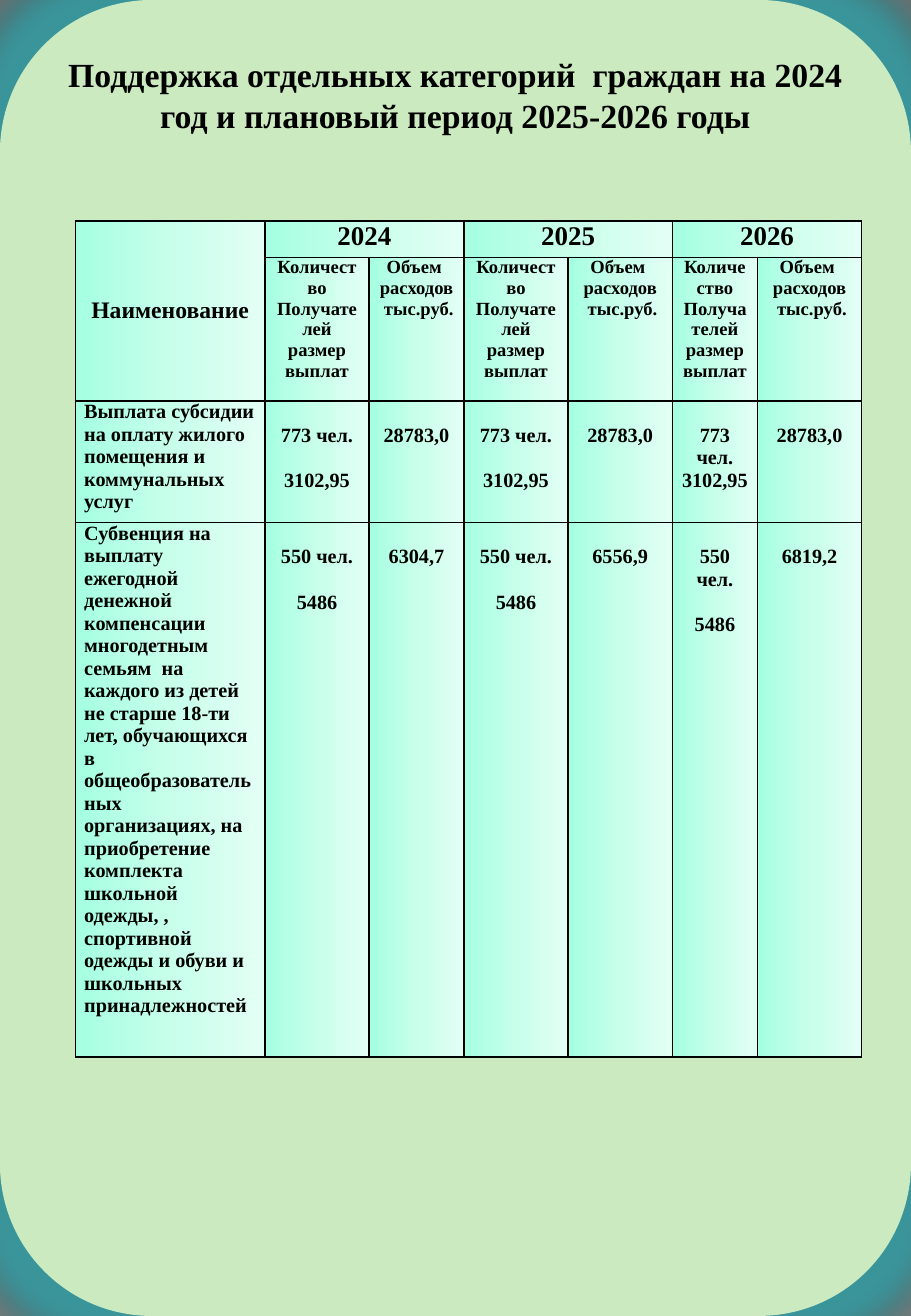
from lxml.etree import SubElement
from pptx import Presentation
from pptx.dml.color import RGBColor
from pptx.enum.shapes import MSO_SHAPE as Shape
from pptx.enum.text import MSO_ANCHOR as Anchor, PP_ALIGN as Align
from pptx.oxml import parse_xml
from pptx.oxml.ns import nsdecls, qn
from pptx.util import Cm, Pt

COLORS = {
    "text": "000000", "panel": "CBEAC0", "border": "000000",
    "glow": "3A959B", "shadow": "000000",
}
BACKDROP = [(0, "FFFFFF"), (25, "FFFFFF"), (100, "707070")]
CELL_FILL = [(0, "A5FFE1"), (50, "C7FFEB"), (100, "E3FFF5")]
CORNER_FOCUS = ('<a:path path="circle"><a:fillToRect l="10000" t="110000"'
                ' r="10000" b="100000"/></a:path>')
LEFT_TO_RIGHT = '<a:lin ang="0" scaled="0"/>'
FONT = "Times New Roman"
LINE_GAP = Pt(13.8)  # one line of 12 pt text

TITLE = "Поддержка отдельных категорий  граждан на 2024 год и плановый период 2025-2026 годы"
COLUMNS = [3.96, 2.18, 1.98, 2.18, 2.18, 1.78, 2.18]
ROWS = [0.76, 3, 2.54, 11.18]
YEARS = ["2024", "2025", "2026"]
COUNT_HEAD = ["Количество", "Получателей", "размер", "выплат"]
COST_HEAD = ["Объем ", "расходов", " тыс.руб."]
# Name, recipients, payment, cost by year, gap before the payment by year
SUPPORT = [
    ("Выплата субсидии на оплату жилого помещения и коммунальных услуг",
     "773 чел.", "3102,95", ["28783,0"] * 3, [LINE_GAP, LINE_GAP, 0]),
    ("Субвенция на выплату ежегодной денежной компенсации многодетным семьям  на "
     "каждого из детей не старше 18-ти лет, обучающихся в общеобразовательных "
     "организациях, на приобретение комплекта школьной одежды, , спортивной одежды "
     "и обуви и школьных принадлежностей",
     "550 чел.", "5486", ["6304,7", "6556,9", "6819,2"], [LINE_GAP] * 3),
]


def gradient(stops, direction):
    marks = "".join(f'<a:gs pos="{place * 1000}"><a:srgbClr val="{color}"/></a:gs>'
                    for place, color in stops)
    return parse_xml(f'<a:gradFill {nsdecls("a")} rotWithShape="1">'
                     f'<a:gsLst>{marks}</a:gsLst>{direction}</a:gradFill>')


def write(frame, lines, size, align=Align.CENTER, gap=0):
    """Write one paragraph per line, with the gap between them."""
    frame.word_wrap = True
    for index, line in enumerate(lines):
        para = frame.add_paragraph() if index else frame.paragraphs[0]
        para.alignment = align
        para.space_before = gap if index else 0
        span = para.add_run()
        span.text = line
        for name, value in {"name": FONT, "size": Pt(size), "bold": True}.items():
            setattr(span.font, name, value)
        span.font.color.rgb = RGBColor.from_string(COLORS["text"])


def draw_background(page):
    page.background.fill.solid()
    holder = page.background._cSld.find(qn("p:bg")).find(qn("p:bgPr"))
    holder.replace(holder[0], gradient(BACKDROP, CORNER_FOCUS))


def draw_panel(page, left, top, width, height):
    panel = page.shapes.add_shape(Shape.ROUNDED_RECTANGLE, left, top, width, height)
    panel.fill.solid()
    panel.fill.fore_color.rgb = RGBColor.from_string(COLORS["panel"])
    panel.line.fill.background()
    panel.shadow.inherit = False
    effects = panel._element.spPr.find(qn("a:effectLst"))
    effects.append(parse_xml(
        f'<a:glow {nsdecls("a")} rad="{Pt(40)}"><a:srgbClr val="{COLORS["glow"]}"/></a:glow>'))
    effects.append(parse_xml(
        f'<a:outerShdw {nsdecls("a")} blurRad="{Pt(3.5)}" dist="{Pt(2.2)}" dir="5400000"'
        f' rotWithShape="0"><a:srgbClr val="{COLORS["shadow"]}"><a:alpha val="32000"/>'
        '</a:srgbClr></a:outerShdw>'))
    # The panel lies behind the title
    page.shapes._spTree.remove(panel._element)
    page.shapes._spTree.insert(2, panel._element)


def place_title(page, left, top, width, height):
    title = page.shapes.title
    for name, value in dict(left=left, top=top, width=width, height=height).items():
        setattr(title, name, value)
    title.text_frame.vertical_anchor = Anchor.TOP
    write(title.text_frame, [TITLE], 20)


def format_cell(cell):
    margins = {"margin_left": Cm(0.18), "margin_right": Cm(0.18),
               "margin_top": 0, "margin_bottom": 0}
    for name, value in margins.items():
        setattr(cell, name, value)
    holder = cell._tc.get_or_add_tcPr()
    for side in ("lnL", "lnR", "lnT", "lnB"):
        line = SubElement(holder, qn(f"a:{side}"), w=str(Pt(1)))
        paint = SubElement(line, qn("a:solidFill"))
        SubElement(paint, qn("a:srgbClr"), val=COLORS["border"])
    holder.append(gradient(CELL_FILL, LEFT_TO_RIGHT))


def draw_table(page, left, top, width, height):
    table = page.shapes.add_table(len(ROWS), len(COLUMNS), left, top, width, height).table
    table.first_row = table.horz_banding = False
    for column, size in zip(table.columns, COLUMNS):
        column.width = Cm(size)
    for row, size in zip(table.rows, ROWS):
        row.height = Cm(size)
    for cell in table.iter_cells():
        format_cell(cell)

    # Heading rows
    name_head = table.cell(0, 0)
    name_head.merge(table.cell(1, 0))
    name_head.vertical_anchor = Anchor.MIDDLE
    write(name_head.text_frame, ["Наименование"], 14)
    for index, year in enumerate(YEARS):
        first = 1 + 2 * index
        table.cell(0, first).merge(table.cell(0, first + 1))
        write(table.cell(0, first).text_frame, [year], 16)
        write(table.cell(1, first).text_frame, COUNT_HEAD, 11)
        write(table.cell(1, first + 1).text_frame, COST_HEAD, 11)

    # Support rows
    for row, (name, people, payment, costs, gaps) in enumerate(SUPPORT, 2):
        write(table.cell(row, 0).text_frame, [name], 12, Align.LEFT)
        for index, (cost, gap) in enumerate(zip(costs, gaps)):
            for offset, lines in enumerate(([people, payment], [cost])):
                cell = table.cell(row, 1 + 2 * index + offset)
                cell.margin_top = LINE_GAP
                write(cell.text_frame, lines, 12, gap=gap)


def main():
    deck = Presentation()
    deck.slide_width, deck.slide_height = Cm(19.05), Cm(27.51)
    page = deck.slides.add_slide(deck.slide_layouts[5])
    draw_background(page)
    draw_panel(page, 0, 0, deck.slide_width, deck.slide_height)
    place_title(page, Cm(0.91), Cm(1), Cm(17.23), Cm(2))
    draw_table(page, Cm(1.58), Cm(4.62), Cm(sum(COLUMNS)), Cm(sum(ROWS)))
    deck.save("out.pptx")


if __name__ == "__main__":
    main()
